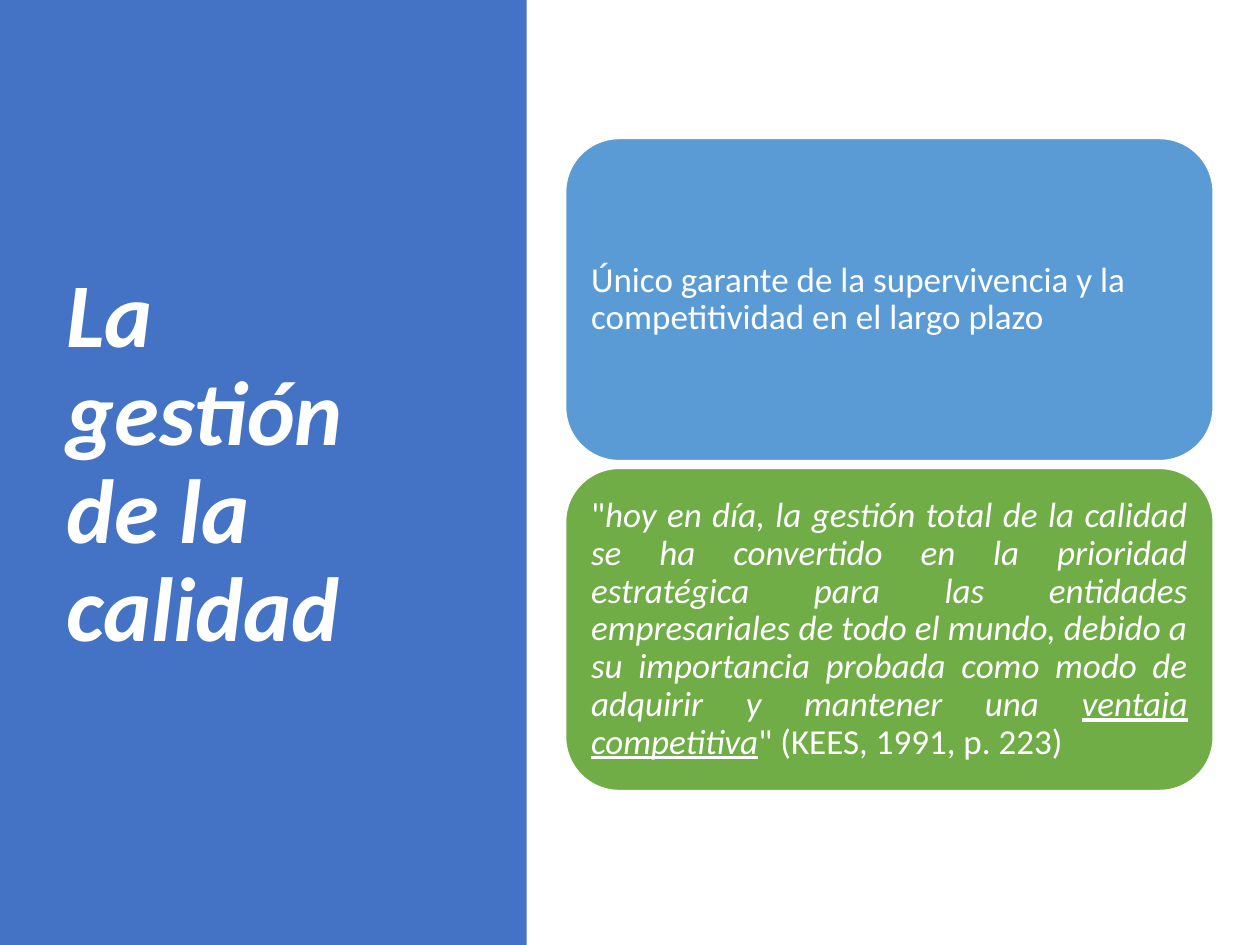
from dataclasses import dataclass

from pptx import Presentation
from pptx.dml.color import RGBColor
from pptx.enum.shapes import MSO_SHAPE
from pptx.enum.text import MSO_ANCHOR, PP_ALIGN
from pptx.util import Cm, Pt


@dataclass(frozen=True)
class Theme:
    """Colours, font and type sizes of the slide."""
    panel: str = "4472C4"
    cards: tuple = ("5B9BD5", "70AD47")
    white: str = "FFFFFF"
    font: str = "Calibri"
    title: int = 52
    body: int = 20


THEME = Theme()
CARDS = [
    (PP_ALIGN.LEFT, [
        ("Único garante de la supervivencia y la competitividad en el largo plazo", {}),
    ]),
    (PP_ALIGN.JUSTIFY, [
        ('"', {}),
        ("hoy en día, la gestión total de la calidad se ha convertido en la "
         "prioridad estratégica para las entidades empresariales de todo el "
         "mundo, debido a su importancia probada como modo de adquirir y "
         "mantener una ", {"italic": True}),
        ("ventaja competitiva", {"italic": True, "underline": True}),
        ('" (KEES, 1991, p. 223)', {}),
    ]),
]


def set_attrs(obj, values):
    """Set each attribute of obj from a dict."""
    for name, value in values.items():
        setattr(obj, name, value)


def write_text(sp, runs, size, align=PP_ALIGN.LEFT, **frame):
    """Write one middle-anchored paragraph of formatted runs."""
    tf = sp.text_frame
    set_attrs(tf, {"word_wrap": True, "vertical_anchor": MSO_ANCHOR.MIDDLE, **frame})
    p = tf.paragraphs[0]
    set_attrs(p, {"alignment": align, "line_spacing": 0.9})
    for text, style in runs:
        r = p.add_run()
        r.text = text
        set_attrs(r.font, {"name": THEME.font, "size": Pt(size), **style})
        r.font.color.rgb = RGBColor.from_string(THEME.white)


def add_block(s, kind, box, fill, line=None):
    """Add a flat filled shape with an optional outline."""
    sp = s.shapes.add_shape(kind, *map(Cm, box))
    sp.shadow.inherit = False
    sp.fill.solid()
    sp.fill.fore_color.rgb = RGBColor.from_string(fill)
    if line:
        sp.line.color.rgb = RGBColor.from_string(line)
        sp.line.width = Pt(1)
    else:
        sp.line.fill.background()
    return sp


def add_title(s, text):
    """Add the large title on the side panel."""
    sp = s.shapes.add_textbox(Cm(1.09), Cm(1.73), Cm(7.92), Cm(15.29))
    write_text(sp, [(text, {"bold": True, "italic": True})], THEME.title)


def add_cards(s, cards):
    """Stack the rounded cards at an equal gap."""
    left, top, width, height, gap = 11.4, 2.79, 13.06, 6.5, 0.15
    sides = ("left", "top", "right", "bottom")
    insets = {f"margin_{side}": Cm(0.2) for side in sides}
    for i, ((align, runs), fill) in enumerate(zip(cards, THEME.cards)):
        box = (left, top + i * (height + gap), width, height)
        sp = add_block(s, MSO_SHAPE.ROUNDED_RECTANGLE, box, fill, THEME.white)
        write_text(sp, runs, THEME.body, align, **insets)


def main():
    """Build and save the slide."""
    prs = Presentation()
    set_attrs(prs, {"slide_width": Cm(25.4), "slide_height": Cm(19.05)})
    s = prs.slides.add_slide(prs.slide_layouts[6])
    add_block(s, MSO_SHAPE.RECTANGLE, (0, 0, 10.62, 19.05), THEME.panel)
    add_title(s, "La gestión de la calidad")
    add_cards(s, CARDS)
    prs.save("out.pptx")


if __name__ == "__main__":
    main()
